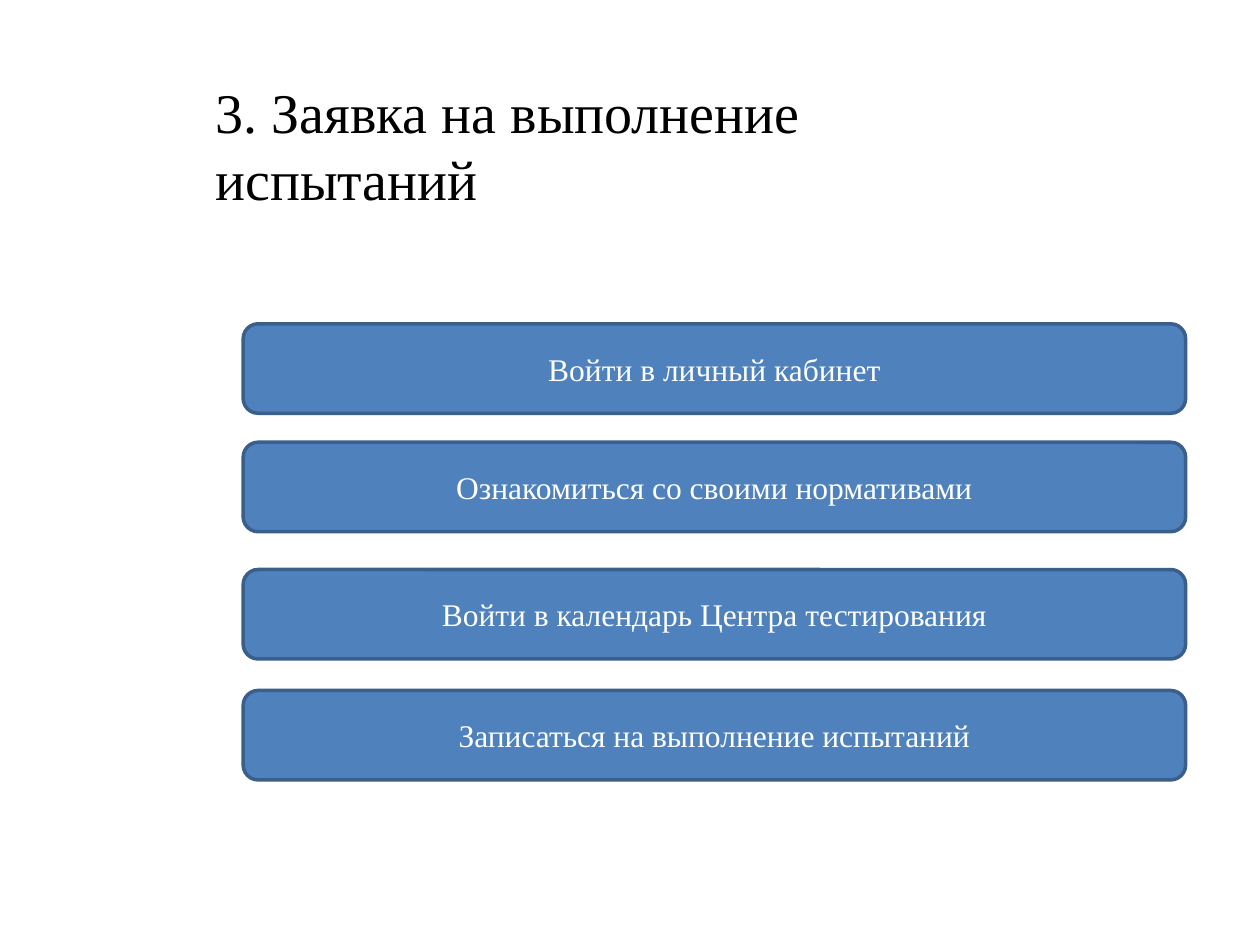
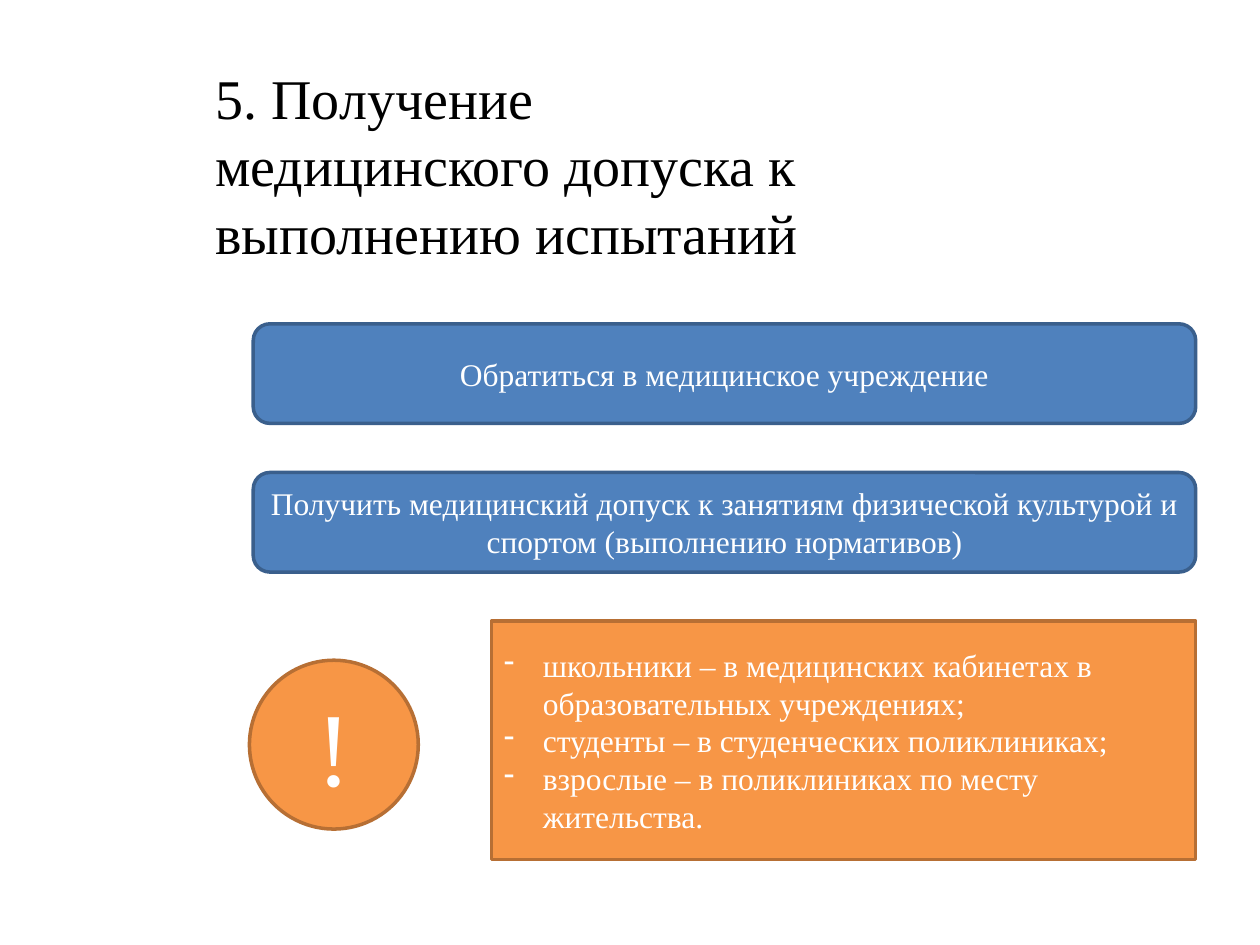
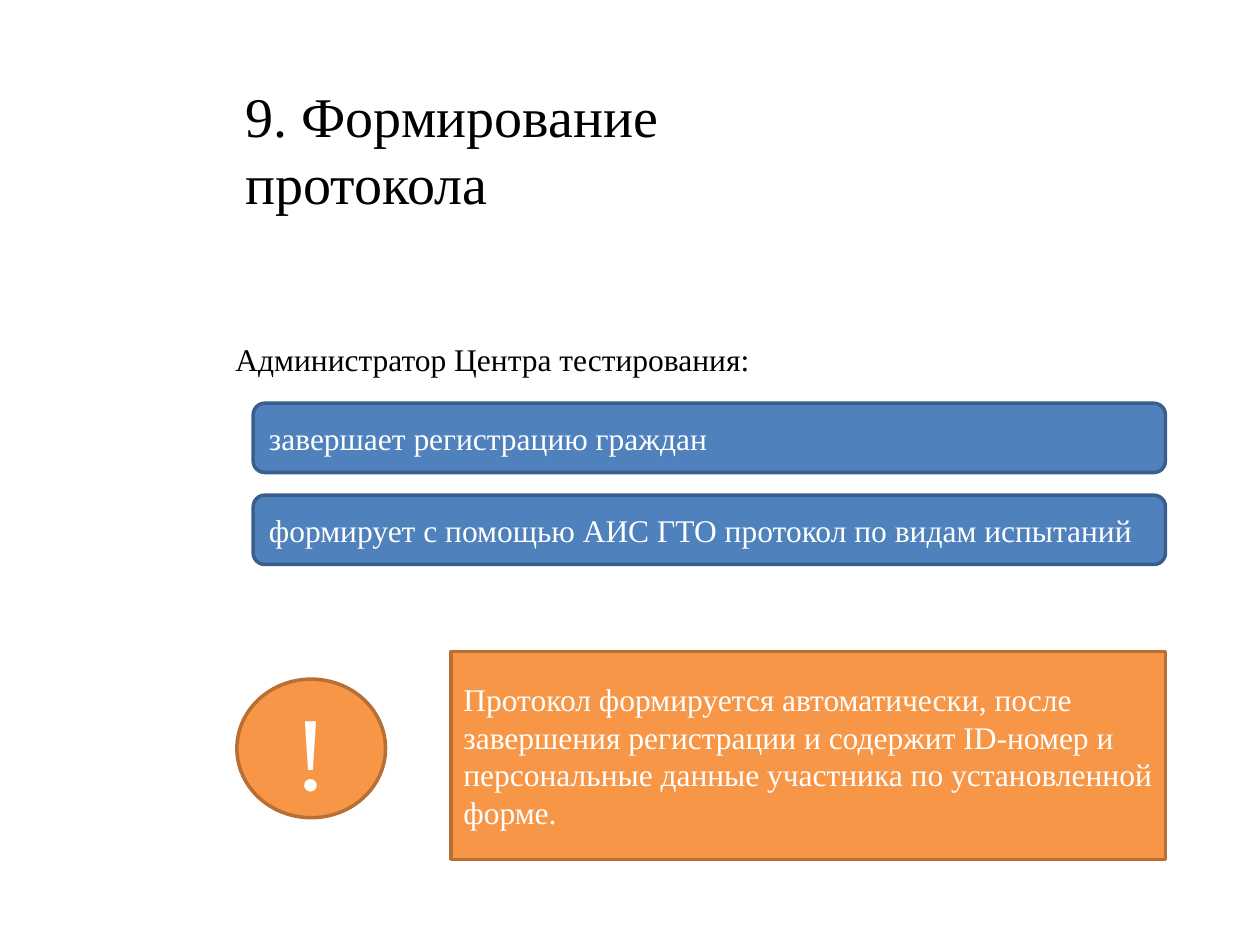
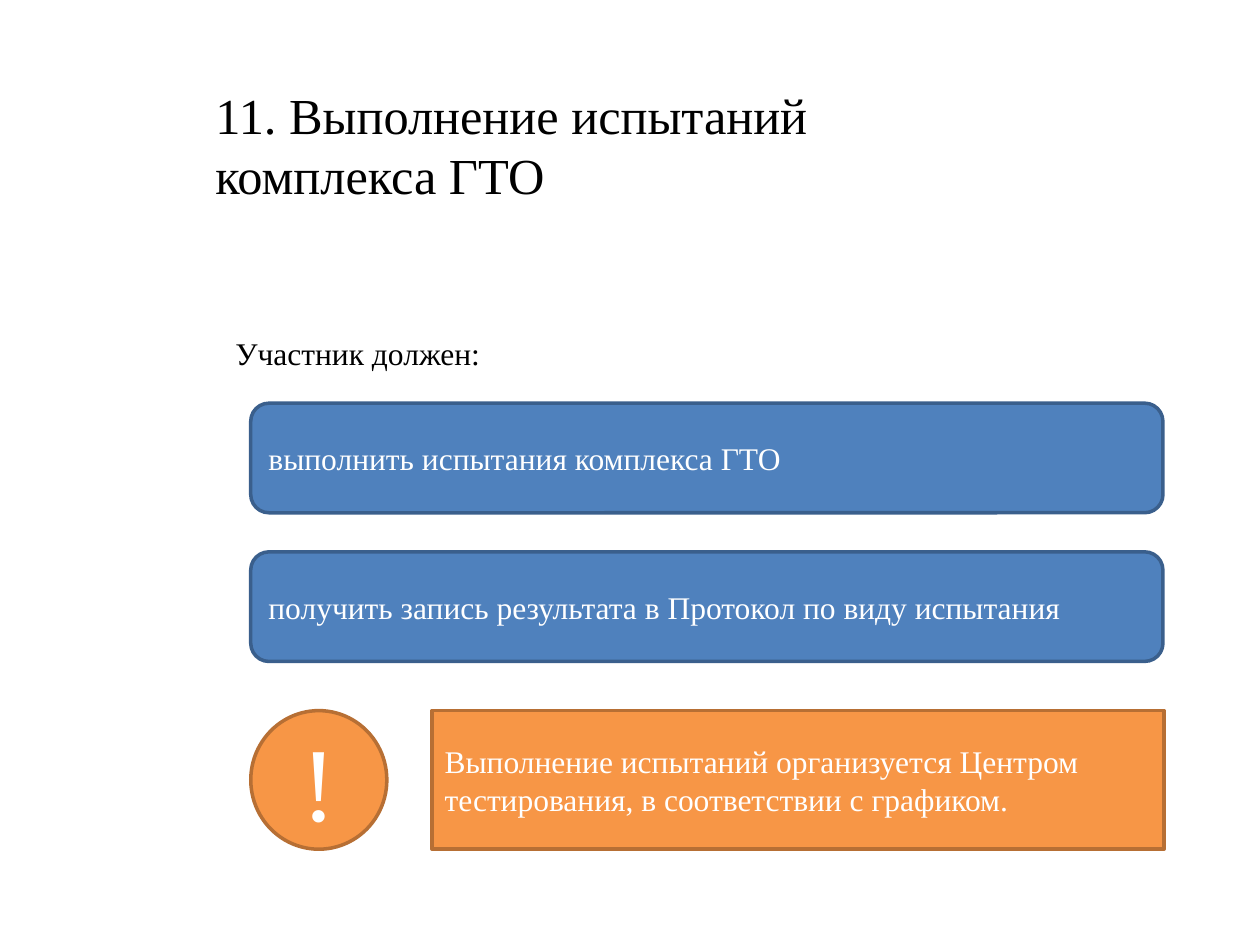
from lxml.etree import SubElement
from pptx import Presentation
from pptx.dml.color import RGBColor
from pptx.enum.shapes import MSO_SHAPE
from pptx.enum.text import MSO_ANCHOR, MSO_AUTO_SIZE, PP_ALIGN
from pptx.oxml.ns import qn
from pptx.util import Inches, Pt

# Shared look
FONT = "Times New Roman"
BLACK, WHITE = "000000", "FFFFFF"
BLUE = ("4F81BD", "3A5F8C")
ORANGE = ("F79646", "B76F34")
BODY_SIZE = 18
TITLE_ONLY = 5


def color(value):
    return RGBColor.from_string(value)


def add_dash(para):
    """Give a paragraph a dash bullet with a hanging indent."""
    properties = para._p.get_or_add_pPr()
    properties.set("marL", str(Inches(0.31)))
    properties.set("indent", str(-Inches(0.31)))
    SubElement(properties, qn("a:buChar"), char="-")


def write(frame, lines, size, text_color, align=PP_ALIGN.LEFT,
          anchor=MSO_ANCHOR.MIDDLE, dashed=False):
    frame.word_wrap = True
    frame.auto_size = MSO_AUTO_SIZE.NONE
    frame.vertical_anchor = anchor
    for index, line in enumerate(lines):
        para = frame.add_paragraph() if index else frame.paragraphs[0]
        para.alignment = align
        if dashed:
            add_dash(para)
        span = para.add_run()
        span.text = line
        span.font.name = FONT
        span.font.size = Pt(size)
        span.font.color.rgb = color(text_color)


def add_page(deck, title, left, top, width, height, size=32):
    page = deck.slides.add_slide(deck.slide_layouts[TITLE_ONLY])
    box = page.shapes.title
    box.left, box.top = Inches(left), Inches(top)
    box.width, box.height = Inches(width), Inches(height)
    write(box.text_frame, [title], size, BLACK)
    return page


def add_intro(page, text, top, width):
    box = page.shapes.add_textbox(Inches(1.77), Inches(top),
                                  Inches(width), Inches(0.4))
    write(box.text_frame, [text], BODY_SIZE, BLACK, anchor=MSO_ANCHOR.TOP)


def add_block(page, kind, colors, place, lines, size=BODY_SIZE, **style):
    box = page.shapes.add_shape(kind, *map(Inches, place))
    box.shadow.inherit = False
    fill, edge = colors
    box.fill.solid()
    box.fill.fore_color.rgb = color(fill)
    box.line.color.rgb = color(edge)
    box.line.width = Pt(2)
    write(box.text_frame, lines, size, WHITE, **style)


def add_steps(page, left, width, height, steps, align=PP_ALIGN.LEFT):
    """Stack rounded bars, each given as (top, text)."""
    for top, text in steps:
        add_block(page, MSO_SHAPE.ROUNDED_RECTANGLE, BLUE,
                  (left, top, width, height), [text], align=align)


def add_warning(page, mark_place, note_place, lines, dashed=False):
    """Exclamation mark in a circle with a note to its right."""
    add_block(page, MSO_SHAPE.OVAL, ORANGE, mark_place, ["!"], 60,
              align=PP_ALIGN.CENTER)
    add_block(page, MSO_SHAPE.RECTANGLE, ORANGE, note_place, lines,
              dashed=dashed)


def main():
    deck = Presentation()
    deck.slide_width, deck.slide_height = Inches(10), Inches(7.5)

    # Application
    page = add_page(deck, "3. Заявка на выполнение испытаний",
                    1.61, 0.52, 6.23, 1.25)
    add_steps(page, 1.93, 7.48, 0.71, [
        (2.57, "Войти в личный кабинет"),
        (3.51, "Ознакомиться со своими нормативами"),
        (4.52, "Войти в календарь Центра тестирования"),
        (5.48, "Записаться на выполнение испытаний"),
    ], PP_ALIGN.CENTER)

    # Medical clearance
    page = add_page(
        deck, "5. Получение медицинского допуска к выполнению испытаний",
        1.61, 0.44, 5.04, 1.73)
    add_steps(page, 2.01, 7.48, 0.79, [
        (2.57, "Обратиться в медицинское учреждение"),
        (3.75, "Получить медицинский допуск к занятиям физической культурой "
               "и спортом (выполнению нормативов)"),
    ], PP_ALIGN.CENTER)
    add_warning(page, (1.98, 5.24, 1.34, 1.34), (3.9, 4.93, 5.59, 1.89), [
        "школьники – в медицинских кабинетах в образовательных учреждениях;",
        "студенты – в студенческих поликлиниках;",
        "взрослые – в поликлиниках по месту жительства.",
    ], dashed=True)

    # Protocol
    page = add_page(deck, "9. Формирование протокола",
                    1.85, 0.44, 5.12, 1.48)
    add_intro(page, "Администратор Центра тестирования:", 2.65, 6.69)
    add_steps(page, 2.01, 7.24, 0.55, [
        (3.2, "завершает регистрацию граждан"),
        (3.93, "формирует с помощью АИС ГТО протокол по видам испытаний"),
    ])
    add_warning(page, (1.88, 5.39, 1.18, 1.1), (3.58, 5.17, 5.67, 1.65), [
        "Протокол формируется автоматически, после завершения регистрации "
        "и содержит ID-номер и персональные данные участника "
        "по установленной форме.",
    ])

    # Taking the tests
    page = add_page(deck, "11. Выполнение испытаний комплекса ГТО",
                    1.61, 0.52, 5.12, 1.25, size=28.8)
    add_intro(page, "Участник должен:", 2.6, 6.14)
    add_steps(page, 1.99, 7.24, 0.87, [
        (3.2, "выполнить испытания комплекса ГТО"),
        (4.38, "получить запись результата в Протокол по виду испытания"),
    ])
    add_warning(page, (1.99, 5.64, 1.08, 1.1), (3.43, 5.64, 5.81, 1.1), [
        "Выполнение испытаний организуется Центром тестирования, "
        "в соответствии с графиком.",
    ])

    deck.save("out.pptx")


if __name__ == "__main__":
    main()
